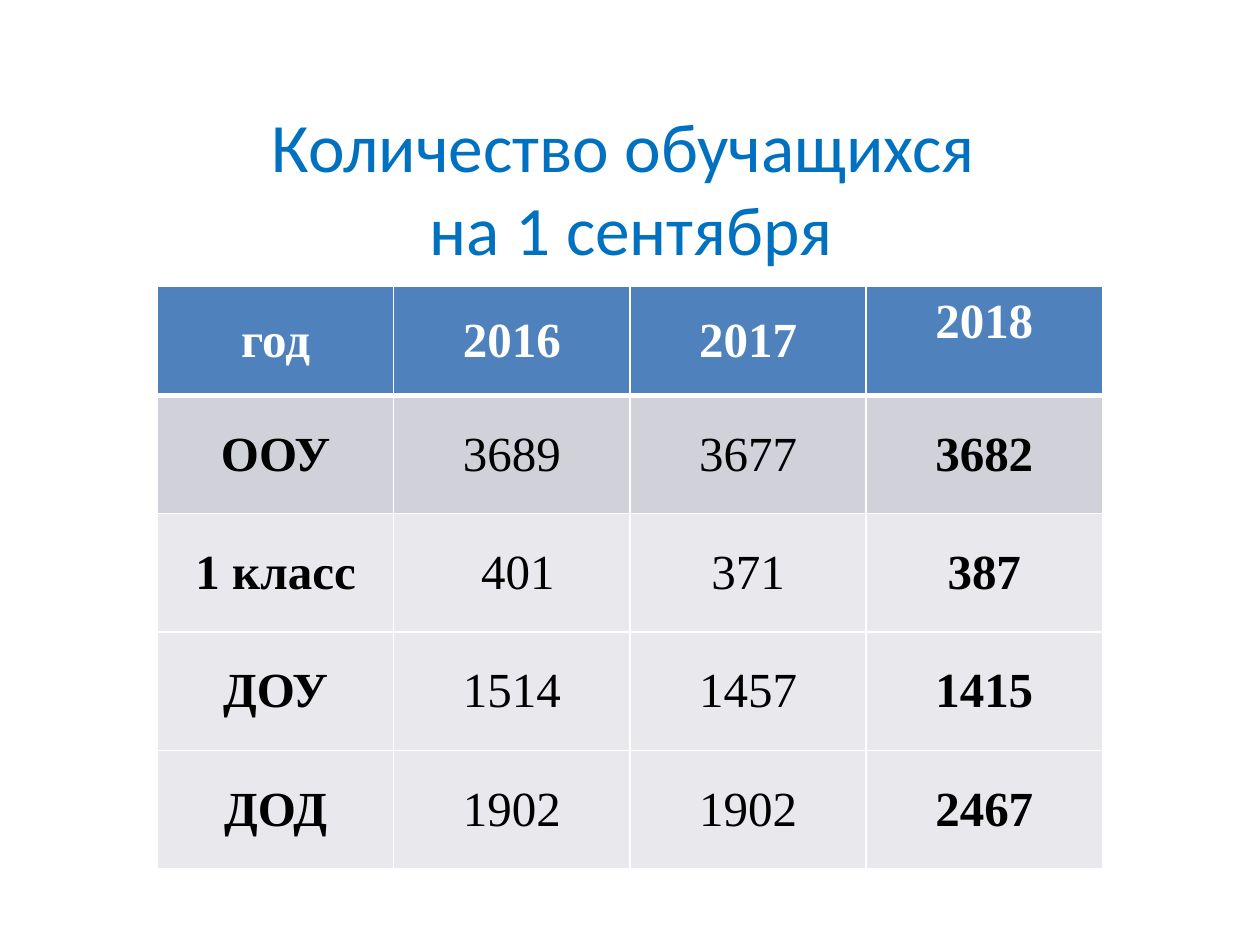
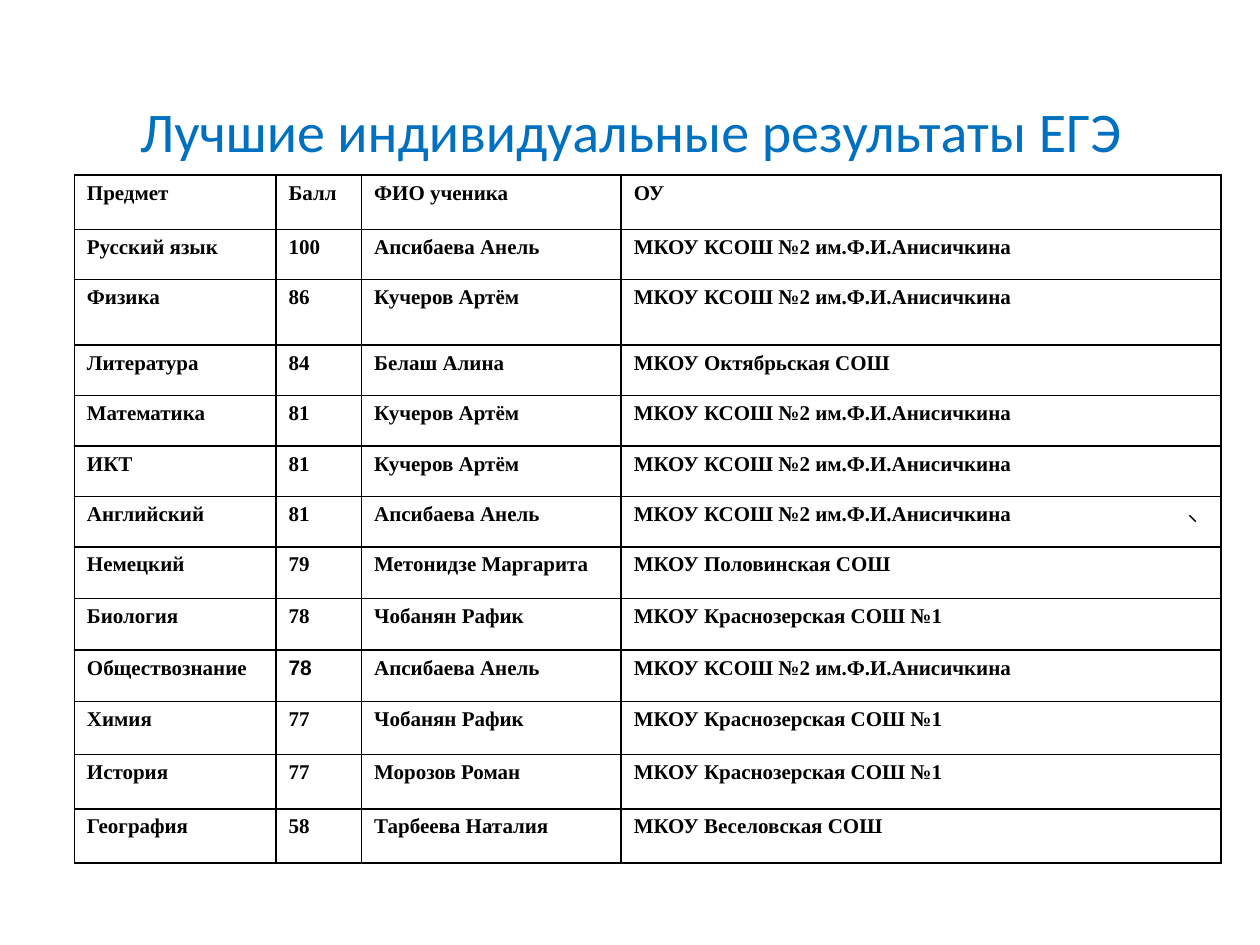
from pptx import Presentation
from pptx.dml.color import RGBColor
from pptx.enum.text import MSO_ANCHOR, PP_ALIGN
from pptx.oxml import parse_xml
from pptx.oxml.ns import nsdecls, qn
from pptx.util import Inches, Pt
from lxml.etree import SubElement

# Content
COUNTS_TITLE = "Количество обучащихся \vна 1 сентября"
COUNTS = [
    ("год", "2016", "2017", "2018"),
    ("ООУ", "3689", "3677", "3682"),
    ("1 класс", " 401", "371", "387"),
    ("ДОУ", "1514", "1457", "1415"),
    ("ДОД", "1902", "1902", "2467"),
]
RESULTS_TITLE = "Лучшие индивидуальные результаты ЕГЭ"
SCHOOL_2 = "МКОУ КСОШ №2 им.Ф.И.Анисичкина"
SCHOOL_1 = "МКОУ Краснозерская СОШ №1"
RESULTS = [
    ("Предмет", "Балл", "ФИО ученика", "ОУ"),
    ("Русский язык", "100", "Апсибаева Анель", SCHOOL_2),
    ("Физика", "86", "Кучеров Артём", SCHOOL_2),
    ("Литература", "84", "Белаш Алина", "МКОУ Октябрьская СОШ"),
    ("Математика", "81", "Кучеров Артём", SCHOOL_2),
    ("ИКТ", "81", "Кучеров Артём", SCHOOL_2),
    ("Английский", "81", "Апсибаева Анель", SCHOOL_2),
    ("Немецкий", "79", "Метонидзе Маргарита", "МКОУ Половинская СОШ"),
    ("Биология", "78", "Чобанян Рафик", SCHOOL_1),
    ("Обществознание", "78", "Апсибаева Анель", SCHOOL_2),
    ("Химия", "77", "Чобанян Рафик", SCHOOL_1),
    ("История", "77", "Морозов Роман", SCHOOL_1),
    ("География", "58", "Тарбеева Наталия", "МКОУ Веселовская СОШ"),
]
RESULT_COLS = [1.6, 0.68, 2.06, 4.76]
RESULT_ROWS = [0.43, 0.4, 0.52] + [0.4] * 4 + [0.41] * 3 + [0.42, 0.43, 0.43]

# Shared style
TITLE_BLUE = RGBColor(0x00, 0x70, 0xC0)
HEADER_BLUE = RGBColor(0x4F, 0x81, 0xBD)
BAND_DARK = RGBColor(0xD1, 0xD1, 0xDA)
BAND_LIGHT = RGBColor(0xE9, 0xE9, 0xED)
WHITE = RGBColor(0xFF, 0xFF, 0xFF)
BLACK = RGBColor(0, 0, 0)
TITLE_FONT, TABLE_FONT = "Calibri", "Times New Roman"


def set_font(p, name, size, color, bold=False):
    p.font.name, p.font.size, p.font.bold = name, Pt(size), bold
    p.font.color.rgb = color


def add_title(s, text, top, height, size):
    box = s.shapes.add_textbox(Inches(0.51), Inches(top), Inches(9), Inches(height))
    tf = box.text_frame
    tf.word_wrap = True
    tf.vertical_anchor = MSO_ANCHOR.MIDDLE
    p = tf.paragraphs[0]
    p.text = text
    p.alignment = PP_ALIGN.CENTER
    set_font(p, TITLE_FONT, size, TITLE_BLUE)


def add_grid(s, rows, left, top, widths, heights):
    table = s.shapes.add_table(len(rows), len(widths), Inches(left), Inches(top),
                               Inches(sum(widths)), Inches(sum(heights))).table
    for column, width in zip(table.columns, widths):
        column.width = Inches(width)
    for row, height in zip(table.rows, heights):
        row.height = Inches(height)
    for r, values in enumerate(rows):
        for c, value in enumerate(values):
            table.cell(r, c).text = value
    return table


def set_borders(cell, color, top=1, bottom=1):
    tc_pr = cell._tc.get_or_add_tcPr()
    for side, width in (("L", 1), ("R", 1), ("T", top), ("B", bottom)):
        ln = SubElement(tc_pr, qn(f"a:ln{side}"), w=str(Pt(width)))
        fill = SubElement(ln, qn("a:solidFill"))
        SubElement(fill, qn("a:srgbClr"), val=str(color))


def build_counts(s):
    add_title(s, COUNTS_TITLE, 1.09, 0.78, 39.6)
    table = add_grid(s, COUNTS, 1.25, 2.27, [7.5 / 4] * 4, [0.86] + [0.94] * 4)
    fills = [HEADER_BLUE, BAND_DARK] + [BAND_LIGHT] * 3
    last = len(COUNTS[0]) - 1
    for r, fill in enumerate(fills):
        for c in range(last + 1):
            cell = table.cell(r, c)
            cell.vertical_anchor = MSO_ANCHOR.MIDDLE
            # Thick rule between the header and the body
            set_borders(cell, WHITE, top=3 if r == 1 else 1, bottom=3 if r == 0 else 1)
            cell.fill.solid()
            cell.fill.fore_color.rgb = fill
            p = cell.text_frame.paragraphs[0]
            p.alignment = PP_ALIGN.CENTER
            set_font(p, TABLE_FONT, 28, BLACK if r else WHITE, r == 0 or c in (0, last))
    # The latest year sits higher in its cell
    table.cell(0, last).margin_bottom = Inches(0.35)


def build_results(s):
    add_title(s, RESULTS_TITLE, 0.68, 0.71, 32)
    table = add_grid(s, RESULTS, 0.59, 1.39, RESULT_COLS, RESULT_ROWS)
    for r, values in enumerate(RESULTS):
        for c in range(len(values)):
            cell = table.cell(r, c)
            set_borders(cell, BLACK)
            cell.fill.background()
            p = cell.text_frame.paragraphs[0]
            p.alignment = PP_ALIGN.LEFT if r else PP_ALIGN.JUSTIFY
            arial_score = values[0] == "Обществознание" and c == 1
            set_font(p, "Arial" if arial_score else TABLE_FONT, 12, BLACK, True)
    # Short stroke at the right edge
    stroke = s.shapes.add_connector(1, Inches(9.44), Inches(4.09), Inches(9.49), Inches(4.14))
    stroke.line.color.rgb = BLACK
    stroke.line.width = Pt(0.75)
    stroke._element.spPr.append(parse_xml(f"<a:effectLst {nsdecls('a')}/>"))


def main():
    prs = Presentation()
    prs.slide_width, prs.slide_height = Inches(10), Inches(7.5)
    for build in (build_counts, build_results):
        build(prs.slides.add_slide(prs.slide_layouts[6]))
    prs.save("out.pptx")


if __name__ == "__main__":
    main()
